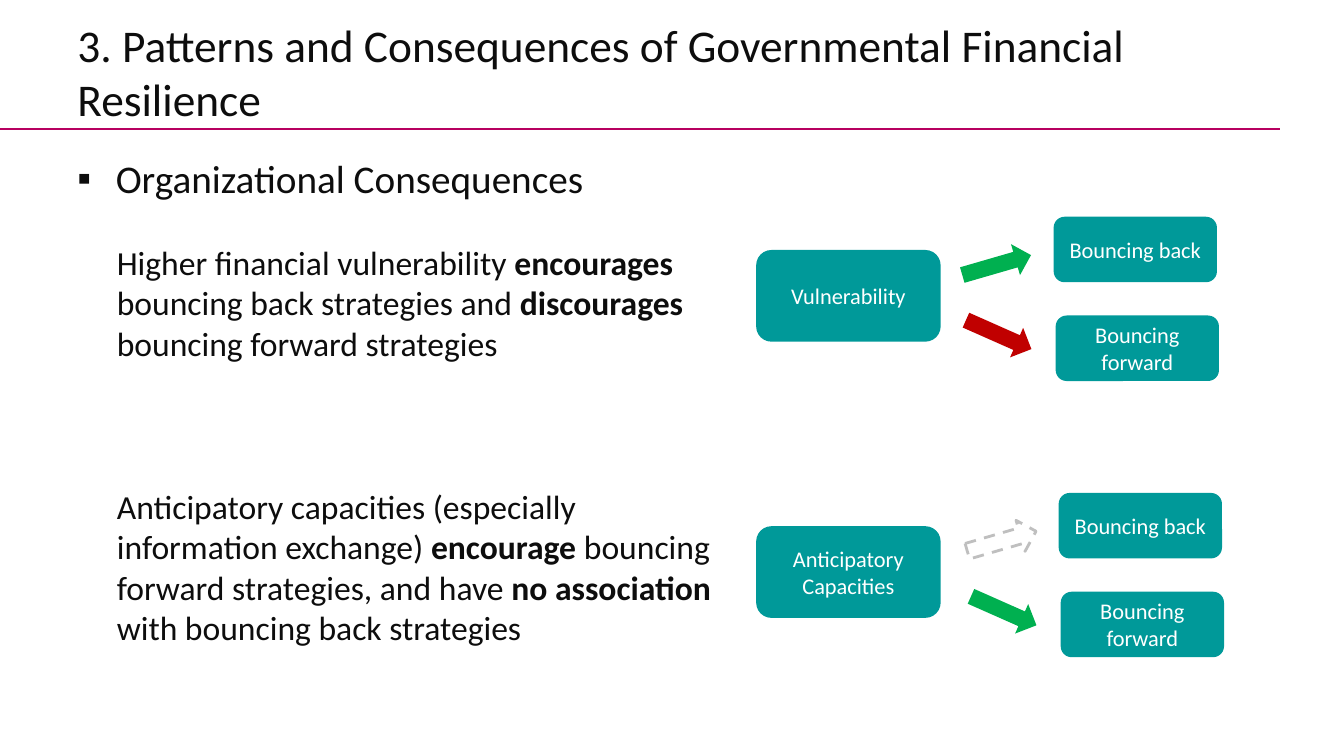
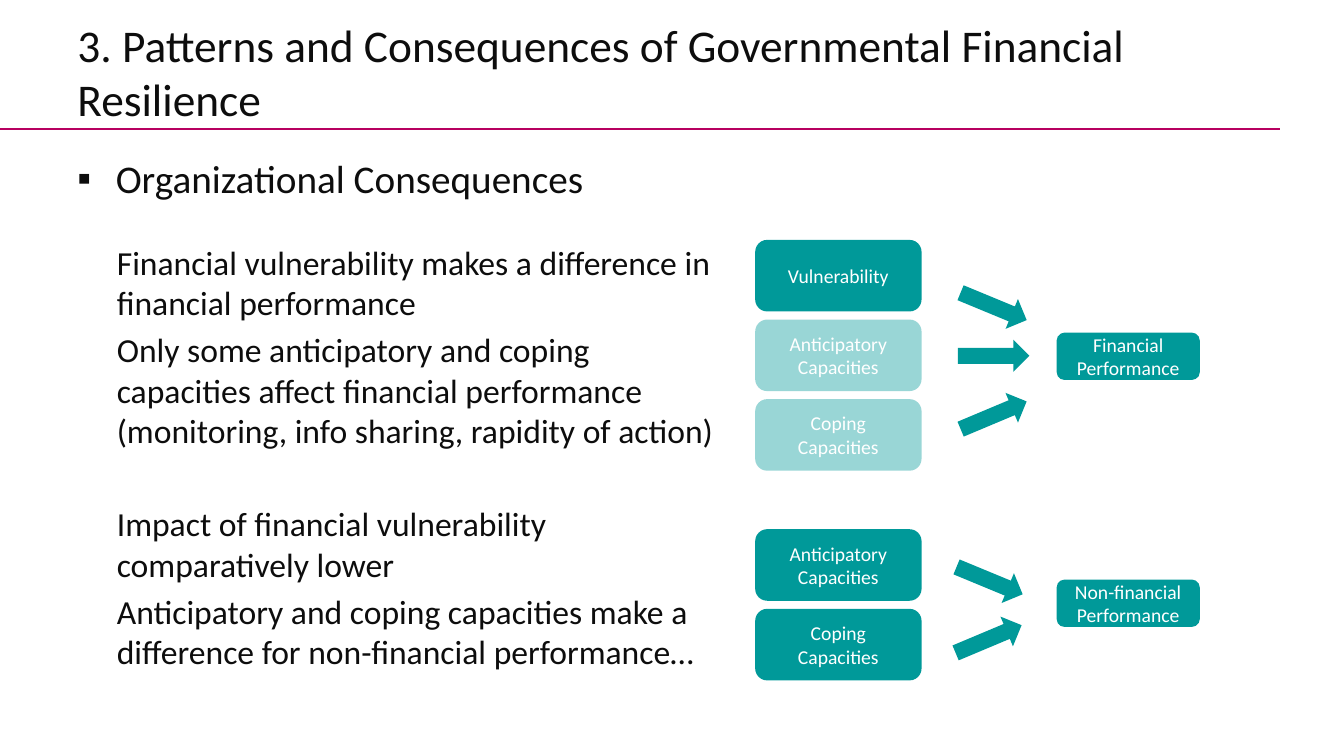
import pptx
import pptx.util
import pptx.dml.color
import pptx.enum.dml
import pptx.enum.shapes
import pptx.enum.text
import pptx.oxml
import pptx.oxml.ns
import lxml.etree

Inches = pptx.util.Inches
Pt = pptx.util.Pt
Kind = pptx.enum.shapes.MSO_SHAPE
Align = pptx.enum.text.PP_ALIGN
Anchor = pptx.enum.text.MSO_ANCHOR
hue = pptx.dml.color.RGBColor.from_string


class Theme:
    font = "Calibri"
    ink = hue("0D0D0D")
    white = hue("FFFFFF")
    teal = hue("009999")
    rule = hue("B70060")
    green = hue("00B050")
    red = hue("C00000")
    gray = hue("BFBFBF")
    title = 32.4
    head = 28
    body = 24
    large = 16
    small = 14


def write(para, text, size, color):
    for spot, part in enumerate(text.split("*")):
        run = para.add_run()
        run.text = part
        run.font.name = Theme.font
        run.font.size = Pt(size)
        run.font.color.rgb = color
        run.font.bold = spot % 2 == 1


def draw(page, kind, place, fill, text="", size=Theme.large, turn=0, alpha=None):
    shape = page.shapes.add_shape(kind, *map(Inches, place))
    shape.shadow.inherit = False
    shape.rotation = turn
    if fill is None:
        shape.fill.background()
        shape.line.color.rgb = Theme.gray
        shape.line.width = Pt(2)
        shape.line.dash_style = pptx.enum.dml.MSO_LINE.DASH
    else:
        shape.fill.solid()
        shape.fill.fore_color.rgb = fill
        shape.line.fill.background()
    if alpha:
        color = shape._element.spPr.find(".//" + pptx.oxml.ns.qn("a:srgbClr"))
        lxml.etree.SubElement(color, pptx.oxml.ns.qn("a:alpha"), val=str(alpha * 1000))
    if text:
        frame = shape.text_frame
        frame.word_wrap = True
        frame.vertical_anchor = Anchor.MIDDLE
        para = frame.paragraphs[0]
        para.alignment = Align.CENTER
        write(para, text, size, Theme.white)


deck = pptx.Presentation()
deck.slide_width = Inches(13.33)
deck.slide_height = Inches(7.5)

title = "3. Patterns and Consequences of Governmental Financial Resilience"
head = "Organizational Consequences"
bodies = [
    [
        (29, "Higher financial vulnerability *encourages* bouncing back strategies "
             "and *discourages* bouncing forward strategies"),
        (88, "Anticipatory capacities (especially information exchange) *encourage* bouncing "
             "forward strategies, and have *no association *with bouncing back strategies"),
    ],
    [
        (29, "Financial vulnerability makes a difference in financial performance"),
        (4.8, "Only some anticipatory and coping capacities affect financial performance "
              "(monitoring, info sharing, rapidity of action)"),
        (38, "Impact of financial vulnerability comparatively lower"),
        (4.8, "Anticipatory and coping capacities make a difference for "
              "non-financial performance…"),
    ],
]

pages = []
for body, width in zip(bodies, (6.65, 6.55)):
    page = deck.slides.add_slide(deck.slide_layouts[6])
    pages.append(page)

    line = page.shapes.add_connector(
        pptx.enum.shapes.MSO_CONNECTOR.STRAIGHT,
        Inches(0), Inches(1.28), Inches(12.7), Inches(1.28))
    line.line.color.rgb = Theme.rule
    line.line.width = Pt(2)
    lxml.etree.SubElement(line._element.spPr, pptx.oxml.ns.qn("a:effectLst"))

    frame = page.shapes.add_textbox(
        Inches(0.67), Inches(0.1), Inches(12.02), Inches(1.2)).text_frame
    frame.word_wrap = True
    frame.vertical_anchor = Anchor.BOTTOM
    write(frame.paragraphs[0], title, Theme.title, Theme.ink)

    frame = page.shapes.add_textbox(
        Inches(0.67), Inches(1.48), Inches(width), Inches(6)).text_frame
    frame.word_wrap = True
    para = frame.paragraphs[0]
    props = para._p.get_or_add_pPr()
    props.set("marL", str(Inches(0.38)))
    props.set("indent", str(-Inches(0.38)))
    lxml.etree.SubElement(props, pptx.oxml.ns.qn("a:buFont"), typeface="Arial")
    lxml.etree.SubElement(props, pptx.oxml.ns.qn("a:buChar"), char="▪")
    write(para, head, Theme.head, Theme.ink)
    for gap, text in body:
        para = frame.add_paragraph()
        para._p.get_or_add_pPr().set("marL", str(Inches(0.39)))
        para.space_before = Pt(gap)
        write(para, text, Theme.body, Theme.ink)

box, arrow = Kind.ROUNDED_RECTANGLE, Kind.RIGHT_ARROW

page = pages[0]
causes = [
    ("Vulnerability", 0, 0, Theme.green, Theme.red),
    ("Anticipatory Capacities", 0.05, 2.74, None, Theme.green),
]
for cause, shift, drop, back, forth in causes:
    draw(page, box, (7.5, 2.48 + drop, 1.83, 0.91), Theme.teal, cause)
    draw(page, box, (10.45 + shift, 2.15 + drop, 1.62, 0.65), Theme.teal, "Bouncing back")
    draw(page, box, (10.47 + shift, 3.13 + drop, 1.62, 0.65), Theme.teal, "Bouncing forward")
    draw(page, arrow, (9.53 + shift, 2.47 + drop, 0.71, 0.32), back, turn=343.8)
    draw(page, arrow, (9.55 + shift, 3.16 + drop, 0.71, 0.32), forth, turn=23.9)

page = pages[1]
groups = [
    (2.38, [("Vulnerability", None), ("Anticipatory Capacities", 40), ("Coping Capacities", 40)],
     "Financial Performance", 3.3,
     [(9.5, 2.88, 22.5), (9.5, 3.37, 0), (9.5, 3.96, 337.2)]),
    (5.25, [("Anticipatory Capacities", None), ("Coping Capacities", None)],
     "Non-financial Performance", 5.75,
     [(9.46, 5.6, 22.5), (9.45, 6.18, 337.2)]),
]
for top, causes, result, level, arrows in groups:
    for row, (cause, alpha) in enumerate(causes):
        draw(page, box, (7.49, top + row * 0.79, 1.65, 0.71), Theme.teal,
             cause, Theme.small, alpha=alpha)
    draw(page, box, (10.48, level, 1.42, 0.47), Theme.teal, result, Theme.small)
    for left, high, turn in arrows:
        draw(page, arrow, (left, high, 0.71, 0.32), Theme.teal, turn=turn)

deck.save("out.pptx")
